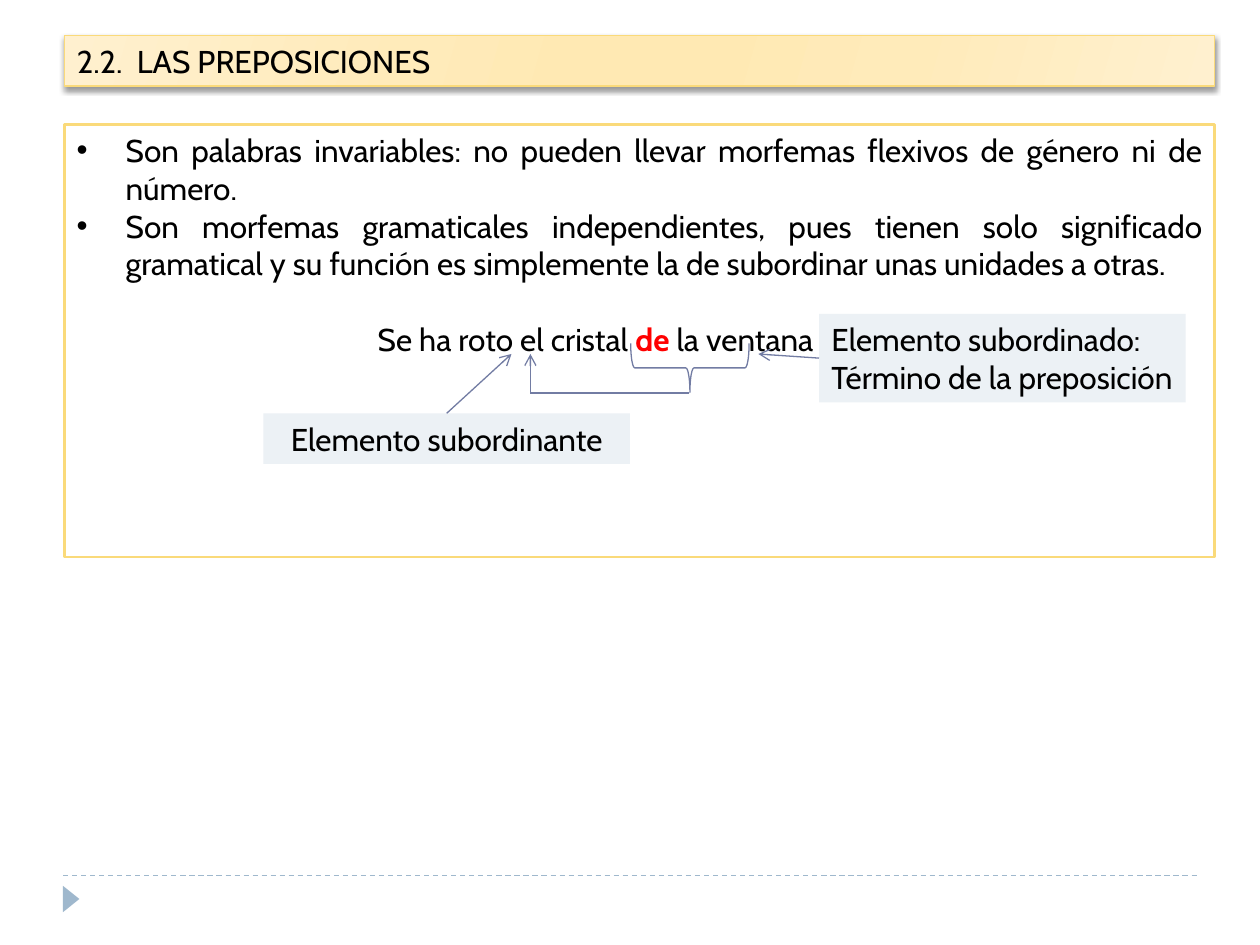
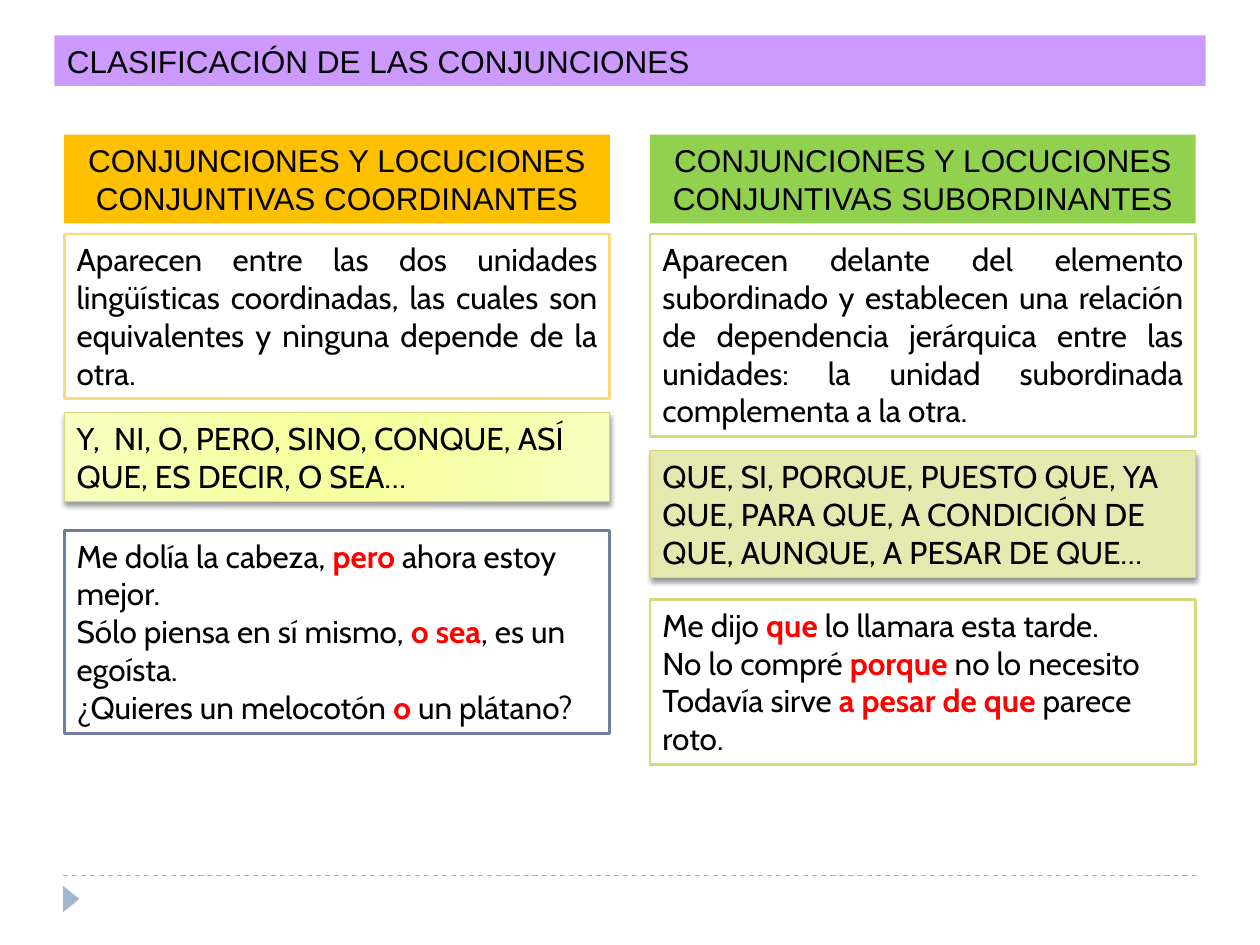
from dataclasses import dataclass

from lxml import etree
from pptx import Presentation
from pptx.dml.color import RGBColor
from pptx.enum import dml, shapes, text
from pptx.oxml.ns import qn
from pptx.util import Pt


@dataclass(frozen=True)
class Theme:
    body_font: str = "Cabin"
    caps_font: str = "Arial"
    size: float = 18
    line_height: float = 21.75
    inset: float = 3.6
    thin: float = 0.75
    thick: float = 1.5
    ink: str = "000000"
    emphasis: str = "FF0000"
    paper: str = "FFFFFF"
    footer: str = "9FB8CD"
    yellow: str = "FADA7A"
    lime: str = "D2DA7A"
    blue: str = "727CA3"
    pale_blue: str = "ECF1F5"
    pale_lime: str = "E4E9AF"
    orange: str = "FFC000"
    green: str = "92D050"
    violet: str = "CC99FF"
    cream_gradient: tuple = ("FFF0CF", "FFEBBA", "FFE9B3")
    lime_gradient: tuple = ("F8FEC2", "F6FFA7", "F6FF9F")


@dataclass(frozen=True)
class Box:
    left: float
    top: float
    width: float
    height: float

    def at(self, x, y):
        """Point at an offset from the top left corner."""
        return self.left + x, self.top + y


THEME = Theme()
ALIGN = text.PP_ALIGN


def height_of(lines):
    return lines * THEME.line_height + 2 * THEME.inset


def add_xml(parent, tag, **attributes):
    return etree.SubElement(parent, qn(tag), attributes)


def write(frame, paragraphs, font=THEME.body_font, align=ALIGN.LEFT):
    """Fill a text frame; words between asterisks are emphasised."""
    frame.word_wrap = True
    frame.auto_size = text.MSO_AUTO_SIZE.NONE
    frame.vertical_anchor = text.MSO_ANCHOR.TOP
    for index, content in enumerate(paragraphs):
        paragraph = frame.paragraphs[0] if index == 0 else frame.add_paragraph()
        paragraph.alignment = align
        for part, words in enumerate(content.split("*")):
            emphasised = part % 2 == 1
            run = paragraph.add_run()
            run.text = words
            run.font.name = font
            run.font.size = Pt(THEME.size)
            run.font.bold = emphasised
            colour = THEME.emphasis if emphasised else THEME.ink
            run.font.color.rgb = RGBColor.from_string(colour)


def indent(paragraph, left, hanging=0, bullet=None):
    properties = paragraph._p.get_or_add_pPr()
    properties.set("marL", str(Pt(left)))
    properties.set("indent", str(Pt(-hanging)))
    if bullet:
        add_xml(properties, "a:buFont", typeface="Arial")
        add_xml(properties, "a:buChar", char=bullet)


def paint(shape, fill=None, line=None, line_width=THEME.thick, shadow=False):
    """Fill with one colour, or with a symmetric gradient of three."""
    if fill is None:
        shape.fill.background()
    elif isinstance(fill, tuple):
        shape.fill.gradient()
        shape.fill.gradient_angle = 344
        stops = shape._element.spPr.find(".//" + qn("a:gsLst"))
        for stop in list(stops):
            stops.remove(stop)
        for position, colour in zip((0, 30, 45, 55, 73, 100), fill + fill[::-1]):
            stop = add_xml(stops, "a:gs", pos=str(position * 1000))
            add_xml(stop, "a:srgbClr", val=colour)
    else:
        shape.fill.solid()
        shape.fill.fore_color.rgb = RGBColor.from_string(fill)
    if line:
        shape.line.color.rgb = RGBColor.from_string(line)
        shape.line.width = Pt(line_width)
    else:
        shape.line.fill.background()
    shape.shadow.inherit = False
    if shadow:
        effects = shape._element.spPr.find(qn("a:effectLst"))
        outer = add_xml(effects, "a:outerShdw", blurRad=str(Pt(3)), dist=str(Pt(2)),
                        dir="5400000", algn="ctr", rotWithShape="0")
        colour = add_xml(outer, "a:srgbClr", val=THEME.ink)
        add_xml(colour, "a:alpha", val="40000")


def add_panel(slide, box, paragraphs, font=THEME.body_font, align=ALIGN.LEFT, **look):
    panel = slide.shapes.add_textbox(*map(Pt, (box.left, box.top, box.width, box.height)))
    paint(panel, **look)
    write(panel.text_frame, paragraphs, font=font, align=align)
    return panel


def add_preset(slide, kind, box, rotation=0, **look):
    shape = slide.shapes.add_shape(kind, *map(Pt, (box.left, box.top, box.width, box.height)))
    shape.rotation = rotation
    paint(shape, **look)
    return shape


def add_line(slide, start, end, colour=THEME.blue, dashed=False, arrow=False):
    line = slide.shapes.add_connector(shapes.MSO_CONNECTOR.STRAIGHT, *map(Pt, start + end))
    line.line.color.rgb = RGBColor.from_string(colour)
    line.line.width = Pt(THEME.thin)
    if dashed:
        line.line.dash_style = dml.MSO_LINE.DASH
    if arrow:
        add_xml(line.line._get_or_add_ln(), "a:tailEnd", type="arrow")
    add_xml(line._element.spPr, "a:effectLst")
    return line


def add_slide(presentation, title, box, font, **look):
    """Title-only slide with its title band and the shared footer."""
    slide = presentation.slides.add_slide(presentation.slide_layouts[5])
    band = slide.shapes.title
    band.left, band.top, band.width, band.height = map(
        Pt, (box.left, box.top, box.width, box.height))
    paint(band, **look)
    write(band.text_frame, [title], font=font)
    add_line(slide, (36, 500.4), (684, 500.4), colour=THEME.footer, dashed=True)
    add_preset(slide, shapes.MSO_SHAPE.ISOSCELES_TRIANGLE, Box(33.1, 509, 15.1, 9.4),
               rotation=90, fill=THEME.footer)
    return slide


def add_callout(slide, box, label, side, target, align=ALIGN.LEFT):
    """Label with an arrow from the middle of one side to a target."""
    panel = add_panel(slide, box, [label], align=align, fill=THEME.pale_blue)
    arrow = add_line(slide, (box.left, box.top), target, arrow=True)
    arrow.begin_connect(panel, side)


def add_prepositions(slide, box):
    panel = add_panel(slide, box, [
        "Son palabras invariables: no pueden llevar morfemas flexivos de género ni de número.",
        "Son morfemas gramaticales independientes, pues tienen solo significado gramatical "
        "y su función es simplemente la de subordinar unas unidades a otras.",
        "Se ha roto el cristal *de *la ventana",
    ], align=ALIGN.JUSTIFY, fill=THEME.paper, line=THEME.yellow)
    *rules, example = panel.text_frame.paragraphs
    for rule in rules:
        indent(rule, 28, hanging=28, bullet="•")
    example.space_before = Pt(THEME.line_height)
    example.alignment = ALIGN.LEFT
    indent(example, 172)

    add_preset(slide, shapes.MSO_SHAPE.RIGHT_BRACE, Box(*box.at(343.5, 105.1), 28, 67.7),
               rotation=90, line=THEME.blue, line_width=THEME.thin)
    brace_tip, corner = box.at(357.3, 153.3), box.at(266.4, 153.3)
    add_line(slide, brace_tip, corner)
    add_line(slide, corner, box.at(266.4, 131), arrow=True)
    add_callout(slide, Box(*box.at(431.3, 108), 209.5, height_of(2)),
                "Elemento subordinado: Término de la preposición", 1, box.at(396.7, 131))
    add_callout(slide, Box(*box.at(113.8, 164.9), 209.5, height_of(1)),
                "Elemento subordinante", 0, box.at(255.6, 131), align=ALIGN.CENTER)


def add_column(slide, box, panels):
    """Stack panels, each given as gap above, line count, paragraphs and look."""
    top = box.top
    for gap, lines, paragraphs, look in panels:
        top += gap
        height = height_of(lines)
        add_panel(slide, Box(box.left, top, box.width, height), paragraphs, **look)
        top += height


def heading(colour):
    return dict(font=THEME.caps_font, align=ALIGN.CENTER, fill=colour)


def outlined(colour, align=ALIGN.LEFT):
    return dict(align=align, fill=THEME.paper, line=colour)


def raised(fill, line):
    return dict(fill=fill, line=line, line_width=THEME.thin, shadow=True)


def add_conjunctions(slide, box):
    gutter = 23
    width = (box.width - gutter) / 2
    coordinating = [
        (0, 2, ["CONJUNCIONES Y LOCUCIONES CONJUNTIVAS COORDINANTES"], heading(THEME.orange)),
        (6, 4, ["Aparecen entre las dos unidades lingüísticas coordinadas, las cuales son "
                "equivalentes y ninguna depende de la otra."],
         outlined(THEME.yellow, ALIGN.JUSTIFY)),
        (8, 2, ["Y,  NI, O, PERO, SINO, CONQUE, ASÍ QUE, ES DECIR, O SEA…"],
         raised(THEME.lime_gradient, THEME.lime)),
        (16.5, 5, ["Me dolía la cabeza,* pero *ahora estoy mejor.",
                   "Sólo piensa en sí mismo, *o sea*, es un egoísta.",
                   "¿Quieres un melocotón *o* un plátano?"], outlined(THEME.blue)),
    ]
    subordinating = [
        (0, 2, ["CONJUNCIONES Y LOCUCIONES CONJUNTIVAS SUBORDINANTES"], heading(THEME.green)),
        (6, 5, ["Aparecen delante del elemento subordinado y establecen una relación de "
                "dependencia jerárquica entre las unidades: la unidad subordinada "
                "complementa a la otra."], outlined(THEME.lime, ALIGN.JUSTIFY)),
        (8, 3, ["QUE, SI, PORQUE, PUESTO QUE, YA QUE, PARA QUE, A CONDICIÓN DE QUE, "
                "AUNQUE, A PESAR DE QUE…"], raised(THEME.pale_lime, THEME.lime)),
        (12.5, 4, ["Me dijo *que *lo llamara esta tarde.",
                   "No lo compré* porque *no lo necesito",
                   "Todavía sirve *a pesar de que *parece roto."], outlined(THEME.lime)),
    ]
    for index, panels in enumerate((coordinating, subordinating)):
        left = box.left + index * (width + gutter)
        add_column(slide, Box(left, box.top, width, box.height), panels)


def main():
    presentation = Presentation()
    presentation.slide_width, presentation.slide_height = Pt(720), Pt(540)

    slide = add_slide(presentation, "2.2.  LAS PREPOSICIONES",
                      Box(36.7, 20.2, 657.5, height_of(1)), THEME.body_font,
                      **raised(THEME.cream_gradient, THEME.yellow))
    add_prepositions(slide, Box(36.7, 71.3, 657.5, 247))

    slide = add_slide(presentation, "CLASIFICACIÓN DE LAS CONJUNCIONES",
                      Box(31, 20.2, 658, height_of(1)), THEME.caps_font, fill=THEME.violet)
    add_conjunctions(slide, Box(36.7, 77, 646.6, 361))

    presentation.save("out.pptx")


if __name__ == "__main__":
    main()
